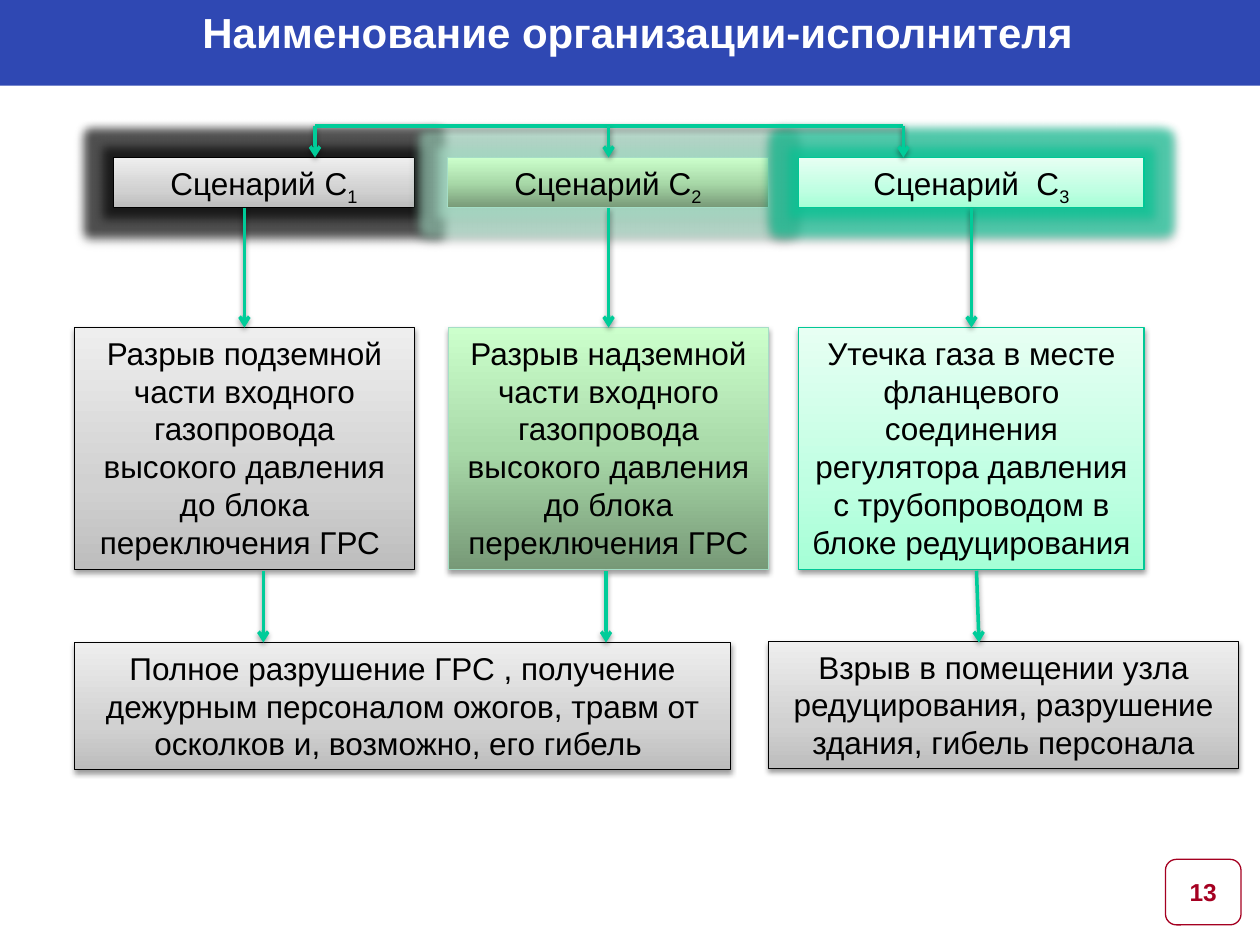
from lxml.etree import SubElement
from pptx import Presentation
from pptx.dml.color import RGBColor
from pptx.enum.shapes import MSO_CONNECTOR as Connector, MSO_SHAPE as Shape
from pptx.enum.text import MSO_ANCHOR as Anchor, PP_ALIGN as Align
from pptx.oxml.ns import qn
from pptx.util import Inches, Pt

GRAY = ([(0, "BDBDBD"), (35, "D1D1D1"), (100, "EEEEEE")], "000000")
GREEN = ([(0, "779977"), (50, "A9DAA9"), (100, "CCFFCC")], "A5DEC6")
MINT = ([(0, "A5FFD6"), (35, "BFFFE2"), (100, "E7FFF3")], "00C896")
ARROW_COLOR = "00CC99"
BADGE_COLOR = "A50021"

SCENARIO_TOP, SCENARIO_HEIGHT = 1.25, 0.4
EVENT_TOP, EVENT_HEIGHT = 2.6, 1.92
RESULT_TOP, RESULT_HEIGHT = 5.1, 1.01

SCENARIOS = [
    ("Сценарий С", "1", 0.9, 2.39, GRAY, 60),
    ("Сценарий С", "2", 3.55, 2.55, GREEN, 60),
    ("Сценарий  С", "3", 6.34, 2.74, MINT, 60),
]
EVENTS = [
    ("Разрыв подземной части входного газопровода высокого давления до блока "
     "переключения ГРС ", 0.59, 2.7, GRAY),
    ("Разрыв надземной части входного газопровода высокого давления до блока "
     "переключения ГРС", 3.56, 2.54, GREEN),
    ("Утечка газа в месте фланцевого соединения регулятора давления "
     "с трубопроводом в блоке редуцирования ", 6.34, 2.74, MINT),
]
RESULTS = [
    ("Полное разрушение ГРС , получение дежурным персоналом ожогов, травм от "
     "осколков и, возможно, его гибель ", 0.59, RESULT_TOP, 5.21),
    ("Взрыв в помещении узла редуцирования, разрушение здания, гибель персонала",
     6.1, RESULT_TOP - 0.01, 3.73),
]


def color(value):
    """Turn a hex string into a colour."""
    return RGBColor.from_string(value)


def add_color(parent, value, alpha=None):
    """Append a colour element with an optional opacity in percent."""
    node = SubElement(parent, qn("a:srgbClr"), val=value)
    if alpha is not None:
        SubElement(node, qn("a:alpha"), val=str(alpha * 1000))


def add_effects(shape, glow=None, glow_alpha=None):
    """Give a shape its soft shadow and an optional glow."""
    effects = SubElement(shape._element.spPr, qn("a:effectLst"))
    if glow:
        node = SubElement(effects, qn("a:glow"), rad=str(Pt(11)))
        add_color(node, glow, glow_alpha)
    shadow = SubElement(effects, qn("a:outerShdw"), blurRad=str(Pt(3.1)),
                        dist=str(Pt(1.6)), dir="5400000", rotWithShape="0")
    add_color(shadow, "000000", 38)


def add_gradient(shape, stops):
    """Fill a shape with a gradient that rises from its bottom edge."""
    gradient = SubElement(shape._element.spPr, qn("a:gradFill"), rotWithShape="1")
    stop_list = SubElement(gradient, qn("a:gsLst"))
    for position, value in stops:
        add_color(SubElement(stop_list, qn("a:gs"), pos=str(position * 1000)), value)
    SubElement(gradient, qn("a:lin"), ang="16200000", scaled="1")


def add_text(shape, text, size=18, fill="000000", bold=False, subscript="",
             anchor=Anchor.TOP):
    """Write one centred paragraph, with an optional subscript."""
    frame = shape.text_frame
    frame.word_wrap = True
    frame.vertical_anchor = anchor
    para = frame.paragraphs[0]
    para.alignment = Align.CENTER
    for part in filter(None, (text, subscript)):
        span = para.add_run()
        span.text = part
        span.font.name = "Arial"
        span.font.size = Pt(size)
        span.font.bold = bold
        span.font.color.rgb = color(fill)
    if subscript:
        span.font._element.set("baseline", "-25000")


def add_block(page, box, text, style, subscript="", glow_alpha=None):
    """Draw one framed gradient block of the diagram."""
    stops, edge = style
    block = page.shapes.add_shape(Shape.RECTANGLE, *map(Inches, box))
    add_gradient(block, stops)
    block.line.color.rgb = color(edge)
    block.line.width = Pt(0.75)
    add_effects(block, edge if glow_alpha else None, glow_alpha)
    add_text(block, text, subscript=subscript)


def add_line(page, start, end, arrow=True):
    """Draw a straight connector, with an arrowhead unless told otherwise."""
    line = page.shapes.add_connector(Connector.STRAIGHT, *map(Inches, start + end))
    line.line.color.rgb = color(ARROW_COLOR)
    line.line.width = Pt(2)
    if arrow:
        SubElement(line.line._get_or_add_ln(), qn("a:tailEnd"), type="arrow")
    add_effects(line)


def add_header(page, left, top, width, height):
    """Draw the title band."""
    band = page.shapes.add_shape(
        Shape.RECTANGLE, *map(Inches, (left, top, width, height)))
    band.shadow.inherit = False
    band.fill.solid()
    band.fill.fore_color.rgb = color("2F48B3")
    band.line.fill.background()
    title = page.shapes.add_textbox(
        *map(Inches, (left + 0.12, top, width - 0.12, height)))
    add_text(title, "Наименование организации-исполнителя", size=24,
             fill="FFFFFF", bold=True)


def add_badge(page, left, top, width, height):
    """Draw the page number in its rounded frame."""
    badge = page.shapes.add_shape(
        Shape.ROUNDED_RECTANGLE, *map(Inches, (left, top, width, height)))
    badge.shadow.inherit = False
    badge.fill.background()
    badge.line.color.rgb = color(BADGE_COLOR)
    badge.line.width = Pt(0.75)
    add_text(badge, "13", size=14, fill=BADGE_COLOR, bold=True, anchor=Anchor.MIDDLE)


def add_scenarios(page, top, height):
    """Draw the scenario row and the branching line above it."""
    for text, number, left, width, style, alpha in SCENARIOS:
        add_block(page, (left, top, width, height), text, style, number, alpha)
    branch_top = top - 0.25
    branches = (2.5, 4.83, 7.17)
    add_line(page, (branches[0], branch_top), (branches[-1], branch_top), arrow=False)
    for x in branches:
        add_line(page, (x, branch_top), (x, top))


def add_events(page, top, height):
    """Draw the event row and the arrows that lead to it."""
    for text, left, width, style in EVENTS:
        add_block(page, (left, top, width, height), text, style)
        center = left + width / 2
        add_line(page, (center, SCENARIO_TOP + SCENARIO_HEIGHT), (center, top))


def add_results(page, top, height):
    """Draw the result row and the arrows that lead to it."""
    for text, left, block_top, width in RESULTS:
        add_block(page, (left, block_top, width, height), text, GRAY)
    for start, end in ((2.09, 2.09), (4.81, 4.81), (7.75, 7.77)):
        add_line(page, (start, EVENT_TOP + EVENT_HEIGHT + 0.01), (end, top))


def main():
    """Build the slide and save it."""
    deck = Presentation()
    deck.slide_width, deck.slide_height = Inches(10), Inches(7.5)
    page = deck.slides.add_slide(deck.slide_layouts[6])
    add_header(page, 0, 0, 10, 0.68)
    add_badge(page, 9.25, 6.82, 0.6, 0.52)
    add_scenarios(page, SCENARIO_TOP, SCENARIO_HEIGHT)
    add_events(page, EVENT_TOP, EVENT_HEIGHT)
    add_results(page, RESULT_TOP, RESULT_HEIGHT)
    deck.save("out.pptx")


if __name__ == "__main__":
    main()
